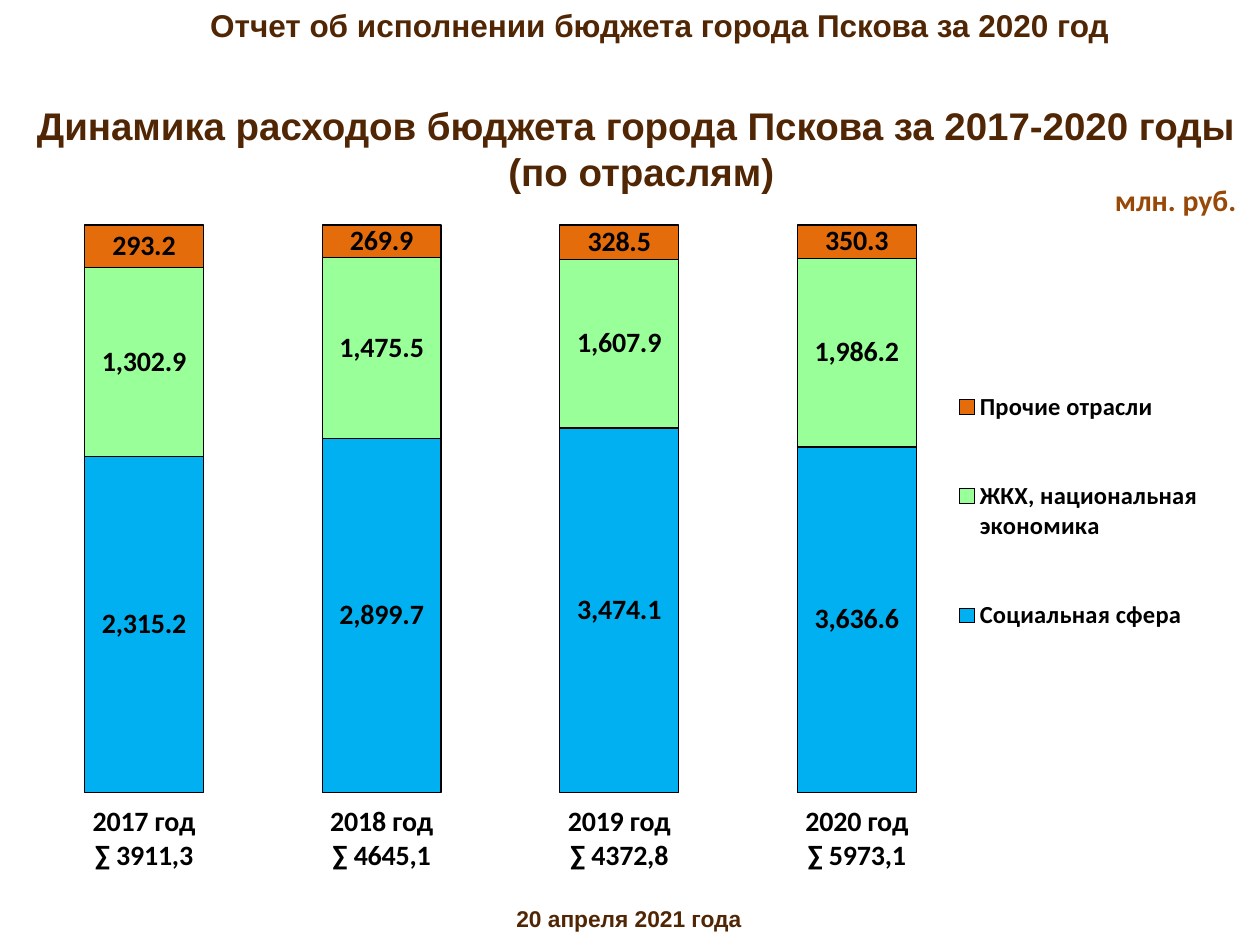
"""Build the slide on Pskov city budget spending by sector, 2017-2020."""
from lxml.etree import SubElement
from pptx import Presentation
from pptx.chart.data import CategoryChartData
from pptx.dml.color import RGBColor
from pptx.enum.chart import XL_CHART_TYPE, XL_LEGEND_POSITION, XL_TICK_MARK
from pptx.enum.text import PP_ALIGN
from pptx.oxml.ns import qn
from pptx.util import Inches, Pt

COLORS = {"brown": "502604", "unit": "984807", "black": "000000",
          "social": "00B0F0", "utilities": "99FF99", "other": "E46C0A"}
TEXTS = [
    {"text": "Отчет об исполнении бюджета города Пскова за 2020 год",
     "at": (0, 0, 10, 0.4), "size": 18, "font": "Arial", "color": "brown",
     "align": PP_ALIGN.LEFT, "indent": 1.57, "wrap": True},
    {"text": "20 апреля 2021 года",
     "at": (-0.01, 7.13, 10, 0.32), "size": 13, "font": "Arial", "color": "brown",
     "align": PP_ALIGN.CENTER, "indent": 0, "wrap": True},
    {"text": "Динамика расходов бюджета города Пскова за 2017-2020 годы \v(по отраслям)",
     "at": (0.13, 0.76, 9.92, 0.84), "size": 22, "font": "Arial", "color": "brown",
     "align": PP_ALIGN.CENTER, "indent": 0, "wrap": False},
    {"text": "млн. руб.",
     "at": (8.75, 1.39, 1.17, 0.39), "size": 17, "font": "Calibri", "color": "unit",
     "align": PP_ALIGN.LEFT, "indent": 0, "wrap": False},
]
TOTALS = [("2017 год", "3911,3"), ("2018 год", "4645,1"),
          ("2019 год", "4372,8"), ("2020 год", "5973,1")]
SERIES = [("Социальная сфера", "social", (2315.2, 2899.7, 3474.1, 3636.6)),
          ("ЖКХ, национальная экономика", "utilities", (1302.9, 1475.5, 1607.9, 1986.2)),
          ("Прочие отрасли", "other", (293.2, 269.9, 328.5, 350.3))]
CHART_AT = (0.2, 1.78, 9.61, 5.35)
PLOT_LAYOUT = (0, 0, 0.785, 0.843)
LEGEND_LAYOUT = (0.75, 0.16, 0.24, 0.53)
NUMBER_FORMAT = "#,##0.0"


def color(name):
    return RGBColor.from_string(COLORS[name])


def style_font(font, size, name, color_name):
    values = {"size": Pt(size), "name": name, "bold": True}
    for attribute, value in values.items():
        setattr(font, attribute, value)
    font.color.rgb = color(color_name)


def add_text(page, item):
    box = page.shapes.add_textbox(*map(Inches, item["at"]))
    frame = box.text_frame
    frame.word_wrap = item["wrap"]
    para = frame.paragraphs[0]
    para.text = item["text"]
    para.alignment = item["align"]
    if item["indent"]:
        properties = para._p.get_or_add_pPr()
        properties.set("marL", str(Inches(item["indent"])))
        properties.set("indent", "0")
    for span in para.runs:
        style_font(span.font, item["size"], item["font"], item["color"])


def set_layout(element, position, inner=False):
    for old in element.findall(qn("c:layout")):
        element.remove(old)
    layout = SubElement(element, qn("c:layout"))
    manual = SubElement(layout, qn("c:manualLayout"))
    settings = [("layoutTarget", "inner")] if inner else []
    settings += [("xMode", "edge"), ("yMode", "edge"), *zip("xywh", position)]
    for tag, value in settings:
        SubElement(manual, qn(f"c:{tag}")).set("val", str(value))
    return layout


def add_budget_chart(page):
    data = CategoryChartData(number_format=NUMBER_FORMAT)
    data.categories = [f"{year}\n∑ {total}" for year, total in TOTALS]
    for name, _, values in SERIES:
        data.add_series(name, values)
    chart = page.shapes.add_chart(
        XL_CHART_TYPE.COLUMN_STACKED_100, *map(Inches, CHART_AT), data).chart
    chart.has_title = False
    style_font(chart.font, 10, "Calibri", "black")

    plot = chart.plots[0]
    plot.gap_width, plot.overlap, plot.vary_by_categories = 100, 100, False
    for series, (_, fill, _) in zip(plot.series, SERIES):
        series.format.fill.solid()
        series.format.fill.fore_color.rgb = color(fill)
        series.format.line.color.rgb = color("black")
        series.format.line.width = Pt(0.75)
        labels = series.data_labels
        labels.show_value = True
        labels.number_format = NUMBER_FORMAT
        labels.number_format_is_linked = False
        style_font(labels.font, 16, "Calibri", "black")

    chart.value_axis.visible = False
    chart.value_axis.has_major_gridlines = False
    axis = chart.category_axis
    axis.major_tick_mark = XL_TICK_MARK.CROSS
    axis.format.line.fill.background()
    style_font(axis.tick_labels.font, 16, "Calibri", "black")

    chart.has_legend = True
    legend = chart.legend
    legend.position = XL_LEGEND_POSITION.RIGHT
    legend.include_in_layout = False
    style_font(legend.font, 14, "Calibri", "black")
    legend_layout = set_layout(legend._element, LEGEND_LAYOUT)
    legend._element.find(qn("c:legendPos")).addnext(legend_layout)
    plot_area = chart._chartSpace.chart.plotArea
    plot_area.insert(0, set_layout(plot_area, PLOT_LAYOUT, inner=True))


def main():
    deck = Presentation()
    deck.slide_width, deck.slide_height = Inches(10), Inches(7.5)
    page = deck.slides.add_slide(deck.slide_layouts[6])
    for item in TEXTS:
        add_text(page, item)
    add_budget_chart(page)
    deck.save("out.pptx")


if __name__ == "__main__":
    main()
